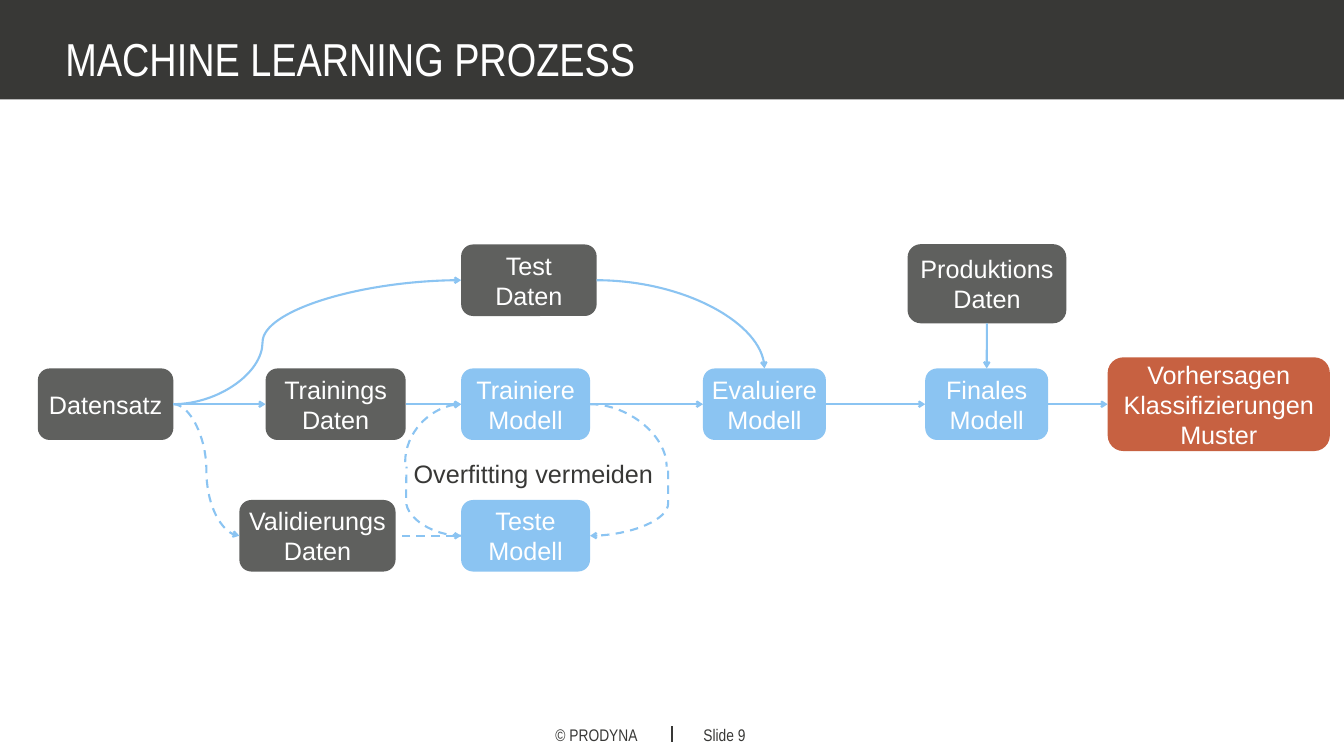
from lxml.etree import SubElement
from pptx import Presentation
from pptx.dml.color import RGBColor
from pptx.enum.dml import MSO_LINE
from pptx.enum.shapes import MSO_CONNECTOR, MSO_SHAPE
from pptx.enum.text import MSO_ANCHOR, PP_ALIGN
from pptx.oxml.ns import qn
from pptx.util import Inches, Pt

WIDTH, HEIGHT = 26.67, 15
DARK, GREY, BLUE, RED, WHITE = "383836", "5F605E", "8BC4F2", "C76141", "FFFFFF"
BOX_H = 1.42
# Left edges of the columns and centre lines of the rows
COL = {"data": 0.75, "valid": 4.75, "train": 5.27, "model": 9.15, "eval": 13.95,
       "prod": 18.01, "final": 18.36, "result": 21.98}
TOP, MAIN, LOW = 5.56, 8.02, 10.63
# Connection sites of a rectangle
N, W, S, E = range(4)


def rgb(value):
    return RGBColor.from_string(value)


def style(tf, size, color, font="Arial", align=PP_ALIGN.LEFT):
    for p in tf.paragraphs:
        p.alignment = align
        for r in p.runs:
            r.font.size, r.font.name = Pt(size), font
            r.font.color.rgb = rgb(color)


def add_shape(s, kind, left, top, width, height, color):
    sp = s.shapes.add_shape(kind, *map(Inches, (left, top, width, height)))
    sp.shadow.inherit = False
    sp.fill.solid()
    sp.fill.fore_color.rgb = rgb(color)
    sp.line.fill.background()
    return sp


def add_box(s, text, col, row, width, color, height=BOX_H):
    """Rounded box starting at a column and centred on a row."""
    sp = add_shape(s, MSO_SHAPE.ROUNDED_RECTANGLE, COL[col], row - height / 2,
                   width, height, color)
    tf = sp.text_frame
    tf.text = text
    tf.word_wrap = True
    tf.vertical_anchor = MSO_ANCHOR.MIDDLE
    style(tf, 36, WHITE, align=PP_ALIGN.CENTER)
    return sp


def add_text(s, text, left, top, width, height, size, color=DARK,
             font="Arial Narrow", align=PP_ALIGN.LEFT):
    tf = s.shapes.add_textbox(*map(Inches, (left, top, width, height))).text_frame
    tf.word_wrap = True
    tf.text = text
    style(tf, size, color, font, align)
    return tf


def add_line(s, start, end, kind=MSO_CONNECTOR.STRAIGHT, color=BLUE, width=3,
             dashed=False, head=False, tail=False):
    c = s.shapes.add_connector(kind, *map(Inches, (*start, *end)))
    c.line.color.rgb = rgb(color)
    c.line.width = Pt(width)
    if dashed:
        c.line.dash_style = MSO_LINE.DASH
    ln = c.line._get_or_add_ln()
    for tag, wanted in (("a:headEnd", head), ("a:tailEnd", tail)):
        if wanted:
            SubElement(ln, qn(tag), type="arrow")
    SubElement(c._element.spPr, qn("a:effectLst"))
    return c


def add_curve(s, start, end, bend=None, **look):
    """S-curve turning at the share bend, or a quarter curve without bend."""
    c = add_line(s, start, end, MSO_CONNECTOR.CURVE, **look)
    geom = c._element.spPr.find(qn("a:prstGeom"))
    if bend is None:
        geom.set("prst", "curvedConnector2")
    else:
        geom.get_or_add_avLst()
        SubElement(geom.avLst, qn("a:gd"), name="adj1",
                   fmla=f"val {round(bend * 100000)}")
    return c


def link(s, a, site_a, b, site_b, **look):
    """Straight arrow glued to two boxes."""
    c = add_line(s, (0, 0), (0, 0), **look)
    c.begin_connect(a, site_a)
    c.end_connect(b, site_b)


def add_frame(s):
    add_shape(s, MSO_SHAPE.RECTANGLE, 0, 0, WIDTH, 1.97, DARK)
    title = add_text(s, "MACHINE LEARNING PROZESS", 1.2, 0.58, 21.96, 0.84, 66, WHITE)
    title.margin_top = Inches(0.14)
    title.paragraphs[0].line_spacing = 0.9
    add_text(s, "© PRODYNA", 8.3, 14.33, 4.45, 0.5, 24, align=PP_ALIGN.RIGHT)
    add_text(s, "Slide 9", 13.86, 14.33, 2.03, 0.5, 24)
    add_line(s, (WIDTH / 2, 14.41), (WIDTH / 2, 14.73), color=DARK, width=3.75)


def add_process(s):
    data = add_box(s, "Datensatz", "data", MAIN, 2.69, GREY)
    train = add_box(s, "Trainings Daten", "train", MAIN, 2.78, GREY)
    valid = add_box(s, "Validierungs Daten", "valid", LOW, 3.1, GREY)
    add_box(s, "Test Daten", "model", TOP, 2.69, GREY)
    fit = add_box(s, "Trainiere Modell", "model", MAIN, 2.56, BLUE)
    check = add_box(s, "Teste Modell", "model", LOW, 2.56, BLUE)
    rate = add_box(s, "Evaluiere\nModell", "eval", MAIN, 2.44, BLUE)
    prod = add_box(s, "Produktions Daten", "prod", 5.63, 3.15, GREY, 1.57)
    final = add_box(s, "Finales Modell", "final", MAIN, 2.44, BLUE)
    result = add_box(s, "Vorhersagen Klassifizierungen Muster", "result", MAIN,
                     4.41, RED, 1.86)

    for a, b in ((data, train), (train, fit), (fit, rate), (rate, final), (final, result)):
        link(s, a, E, b, W, tail=True)
    link(s, prod, S, final, N, tail=True)
    link(s, check, W, valid, E, dashed=True, head=True)

    data_end = (COL["data"] + 2.69, MAIN)
    add_curve(s, data_end, (COL["model"], TOP), 0.31, tail=True)
    add_curve(s, data_end, (COL["valid"], LOW), 0.5, dashed=True, tail=True)
    add_curve(s, (COL["model"] + 2.69, TOP), (COL["eval"] + 1.22, MAIN - BOX_H / 2),
              tail=True)


def add_overfitting_loop(s):
    left, right = COL["model"], COL["model"] + 2.56
    add_text(s, "Overfitting vermeiden", 8.11, 9.04, 5.16, 0.71, 36, font="Arial")
    for x, y in ((13.04, 9.22), (7.85, 9.14)):
        add_shape(s, MSO_SHAPE.OVAL, x, y, 0.22, 0.23, WHITE)
    add_curve(s, (right, MAIN), (13.23, 9.26), dashed=True)
    add_curve(s, (13.26, 9.34), (right, LOW), 0, dashed=True, tail=True)
    add_curve(s, (left, LOW), (8.07, 9.26), 1.01, dashed=True)
    add_curve(s, (left, MAIN), (8.04, 9.17), dashed=True, head=True)


def main():
    prs = Presentation()
    prs.slide_width, prs.slide_height = Inches(WIDTH), Inches(HEIGHT)
    s = prs.slides.add_slide(prs.slide_layouts[6])
    add_frame(s)
    add_process(s)
    add_overfitting_loop(s)
    prs.save("out.pptx")


if __name__ == "__main__":
    main()
